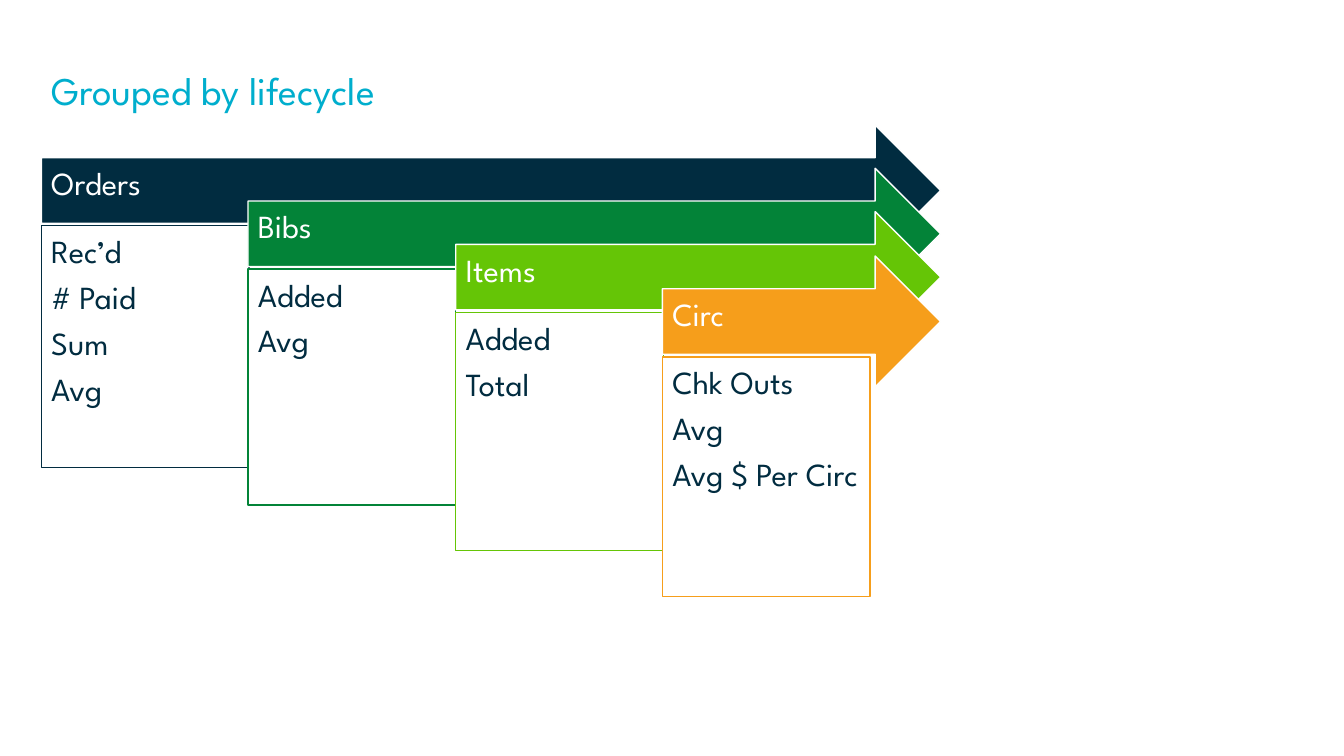
from pptx import Presentation
from pptx.dml.color import RGBColor
from pptx.enum.shapes import MSO_SHAPE as Shape
from pptx.enum.text import MSO_ANCHOR as Anchor, PP_ALIGN as Align
from pptx.util import Pt

EMU_PER_PX = 9144
NAVY, WHITE, CYAN = "012C40", "FFFFFF", "00AECD"
STAGES = [
    ("Orders", NAVY, 240, ["Rec’d", "# Paid", "Sum", "Avg"]),
    ("Bibs", "038338", 234, ["Added", "Avg"]),
    ("Items", "65C506", 236, ["Added", "Total"]),
    ("Circ", "F69E1B", 238, ["Chk Outs", "Avg", "Avg $ Per Circ"]),
]
LEFT, TOP, ARROW_TIP = 41, 124, 933
STEP_X, STEP_Y = 205.4, 43.2
ARROW_HEIGHT, BOX_OFFSET, BOX_WIDTH = 130, 100, 206


def px(length):
    return round(length * EMU_PER_PX)


def color(value):
    return RGBColor.from_string(value)


class LifecycleSlide:
    """Draws styled elements on the current slide."""

    font_name = "League Spartan"

    def __init__(self, deck):
        self.page = deck.slides.add_slide(deck.slide_layouts[6])

    def set_text(self, shape, lines, size, ink, margins, anchor, space_after=0):
        frame = shape.text_frame
        frame.word_wrap = True
        frame.vertical_anchor = anchor
        (frame.margin_left, frame.margin_top,
         frame.margin_right, frame.margin_bottom) = map(px, margins)
        for index, line in enumerate(lines):
            para = frame.add_paragraph() if index else frame.paragraphs[0]
            para.text = line
            para.alignment = Align.LEFT
            para.line_spacing = 0.9
            para.space_after = Pt(space_after)
            para.font.name = self.font_name
            para.font.size = Pt(size)
            para.font.color.rgb = color(ink)

    def shape(self, kind, bounds, fill, line):
        shape = self.page.shapes.add_shape(kind, *map(px, bounds))
        shape.shadow.inherit = False
        shape.fill.solid()
        shape.fill.fore_color.rgb = color(fill)
        shape.line.color.rgb = color(line)
        shape.line.width = Pt(1)
        return shape

    def title(self, text, bounds):
        box = self.page.shapes.add_textbox(*map(px, bounds))
        self.set_text(box, [text], 28, CYAN, (10, 5, 10, 5), Anchor.MIDDLE)

    def arrow(self, label, bounds, fill):
        arrow = self.shape(Shape.RIGHT_ARROW, bounds, fill, WHITE)
        self.set_text(arrow, [label], 23, WHITE, (10, 10, 28, 21), Anchor.MIDDLE, 8)

    def measures(self, lines, bounds, line):
        box = self.shape(Shape.RECTANGLE, bounds, WHITE, line)
        self.set_text(box, lines, 23, NAVY, (10, 10, 10, 10), Anchor.TOP, 8)


def main():
    deck = Presentation()
    deck.slide_width, deck.slide_height = px(1333), px(750)
    slide = LifecycleSlide(deck)
    slide.title("Grouped by lifecycle", (LEFT, 55, 1150, 74))
    for index, (label, accent, height, lines) in enumerate(STAGES):
        left = round(LEFT + index * STEP_X)
        top = round(TOP + index * STEP_Y)
        slide.arrow(label, (left, top, ARROW_TIP - left, ARROW_HEIGHT), accent)
        slide.measures(lines, (left, top + BOX_OFFSET, BOX_WIDTH, height), accent)
    deck.save("out.pptx")


if __name__ == "__main__":
    main()
